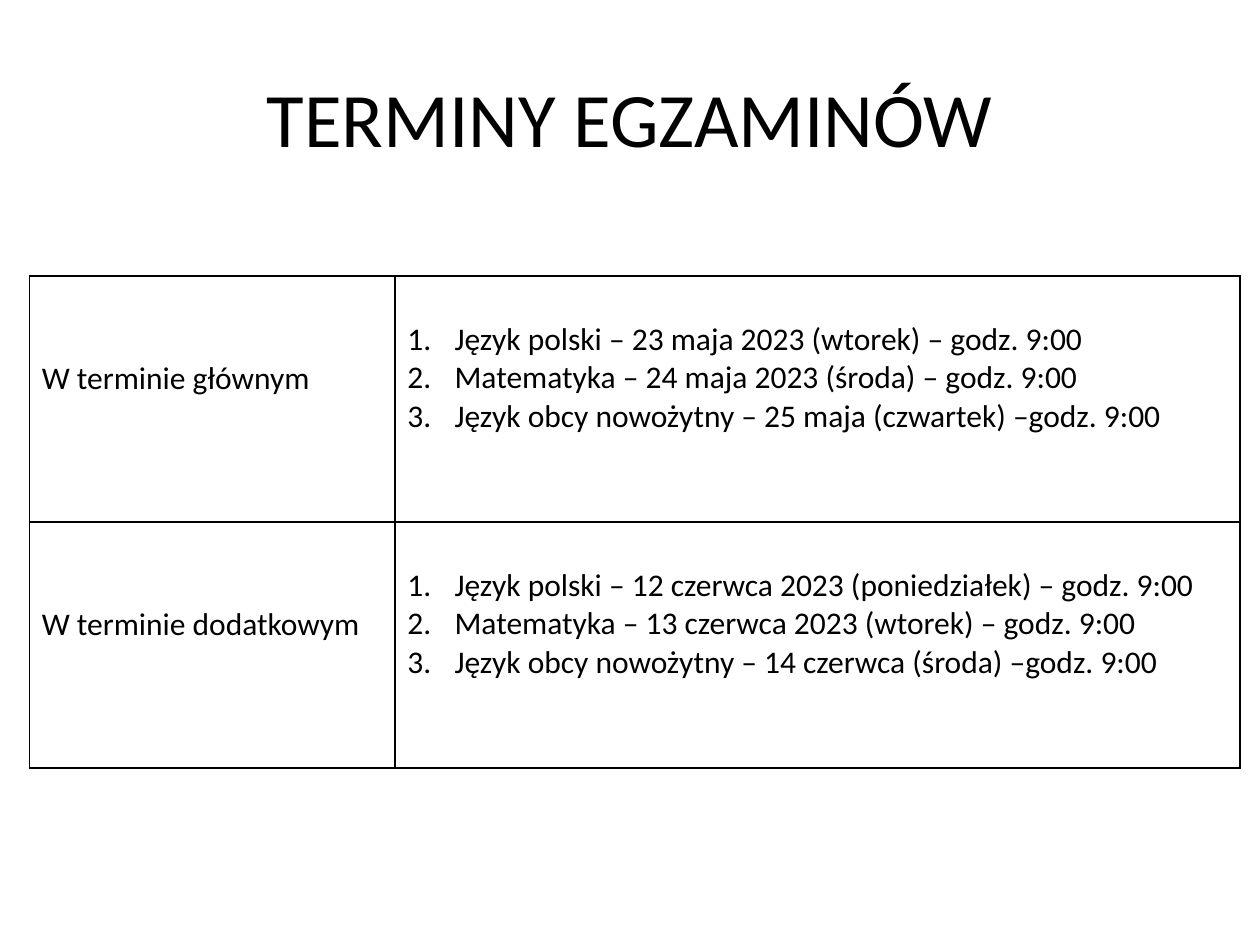
"""Builds a slide with the main and additional exam dates."""
import dataclasses

import lxml.etree
import pptx
import pptx.dml.color
import pptx.enum.text
import pptx.oxml.ns
import pptx.slide
import pptx.table
import pptx.text.text
import pptx.util

Cm = pptx.util.Cm
Pt = pptx.util.Pt


@dataclasses.dataclass(frozen=True)
class Theme:
    font: str = "Calibri"
    ink: str = "000000"
    title_size: int = 44
    body_size: int = 18
    border_width: int = 1
    list_indent: float = 0.95
    label_inset: float = 1.68
    list_inset: float = 0.9


@dataclasses.dataclass(frozen=True)
class Session:
    label: str
    exams: tuple[str, ...]


THEME = Theme()
COLUMN_WIDTHS = (7.37, 17.04)
ROW_HEIGHT = 4.96
SESSIONS = (
    Session("W terminie głównym", (
        "Język polski – 23 maja 2023 (wtorek) – godz. 9:00",
        "Matematyka – 24 maja 2023 (środa) – godz. 9:00",
        "Język obcy nowożytny – 25 maja (czwartek) –godz. 9:00",
    )),
    Session("W terminie dodatkowym", (
        "Język polski – 12 czerwca 2023 (poniedziałek) – godz. 9:00",
        "Matematyka – 13 czerwca 2023 (wtorek) – godz. 9:00",
        "Język obcy nowożytny – 14 czerwca (środa) –godz. 9:00",
    )),
)


def add_span(para: pptx.text.text._Paragraph, text: str, size: int) -> None:
    span = para.add_run()
    span.text = text
    span.font.name = THEME.font
    span.font.size = Pt(size)
    span.font.color.rgb = pptx.dml.color.RGBColor.from_string(THEME.ink)


def add_element(parent: lxml.etree._Element, tag: str, **attributes: str) -> lxml.etree._Element:
    return lxml.etree.SubElement(parent, pptx.oxml.ns.qn(tag), attributes)


def number_paragraph(para: pptx.text.text._Paragraph) -> None:
    properties = para._p.get_or_add_pPr()
    indent = Cm(THEME.list_indent)
    properties.set("marL", str(indent))
    properties.set("indent", str(-indent))
    add_element(properties, "a:buFont", typeface="+mj-lt")
    add_element(properties, "a:buAutoNum", type="arabicPeriod")


def outline_cell(cell: pptx.table._Cell) -> None:
    properties = cell._tc.get_or_add_tcPr()
    for position, side in enumerate("LRTB"):
        line = add_element(properties, f"a:ln{side}", w=str(Pt(THEME.border_width)))
        fill = add_element(line, "a:solidFill")
        add_element(fill, "a:srgbClr", val=THEME.ink)
        properties.insert(position, line)


def fill_cell(cell: pptx.table._Cell, lines: tuple[str, ...], inset: float, numbered: bool) -> None:
    cell.fill.background()
    cell.margin_top = Cm(inset)
    outline_cell(cell)
    frame = cell.text_frame
    for index, text in enumerate(lines):
        para = frame.add_paragraph() if index else frame.paragraphs[0]
        if numbered:
            number_paragraph(para)
        add_span(para, text, THEME.body_size)


def add_title(page: pptx.slide.Slide, text: str) -> None:
    box = page.shapes.add_textbox(Cm(1.27), Cm(0.76), Cm(22.86), Cm(3.18))
    frame = box.text_frame
    frame.word_wrap = True
    frame.vertical_anchor = pptx.enum.text.MSO_ANCHOR.MIDDLE
    para = frame.paragraphs[0]
    para.alignment = pptx.enum.text.PP_ALIGN.CENTER
    add_span(para, text, THEME.title_size)


def add_schedule(page: pptx.slide.Slide, sessions: tuple[Session, ...]) -> None:
    table = page.shapes.add_table(
        len(sessions), len(COLUMN_WIDTHS), Cm(0.59), Cm(5.56),
        Cm(sum(COLUMN_WIDTHS)), Cm(ROW_HEIGHT * len(sessions)),
    ).table
    table.first_row = False
    table.horz_banding = False
    for column, width in zip(table.columns, COLUMN_WIDTHS):
        column.width = Cm(width)
    for row, session in zip(table.rows, sessions):
        row.height = Cm(ROW_HEIGHT)
        label_cell, exams_cell = row.cells
        fill_cell(label_cell, (session.label,), THEME.label_inset, numbered=False)
        fill_cell(exams_cell, session.exams, THEME.list_inset, numbered=True)


def main() -> None:
    deck = pptx.Presentation()
    deck.slide_width = Cm(25.4)
    deck.slide_height = Cm(19.05)
    page = deck.slides.add_slide(deck.slide_layouts[6])
    add_title(page, "TERMINY EGZAMINÓW")
    add_schedule(page, SESSIONS)
    deck.save("out.pptx")


if __name__ == "__main__":
    main()
